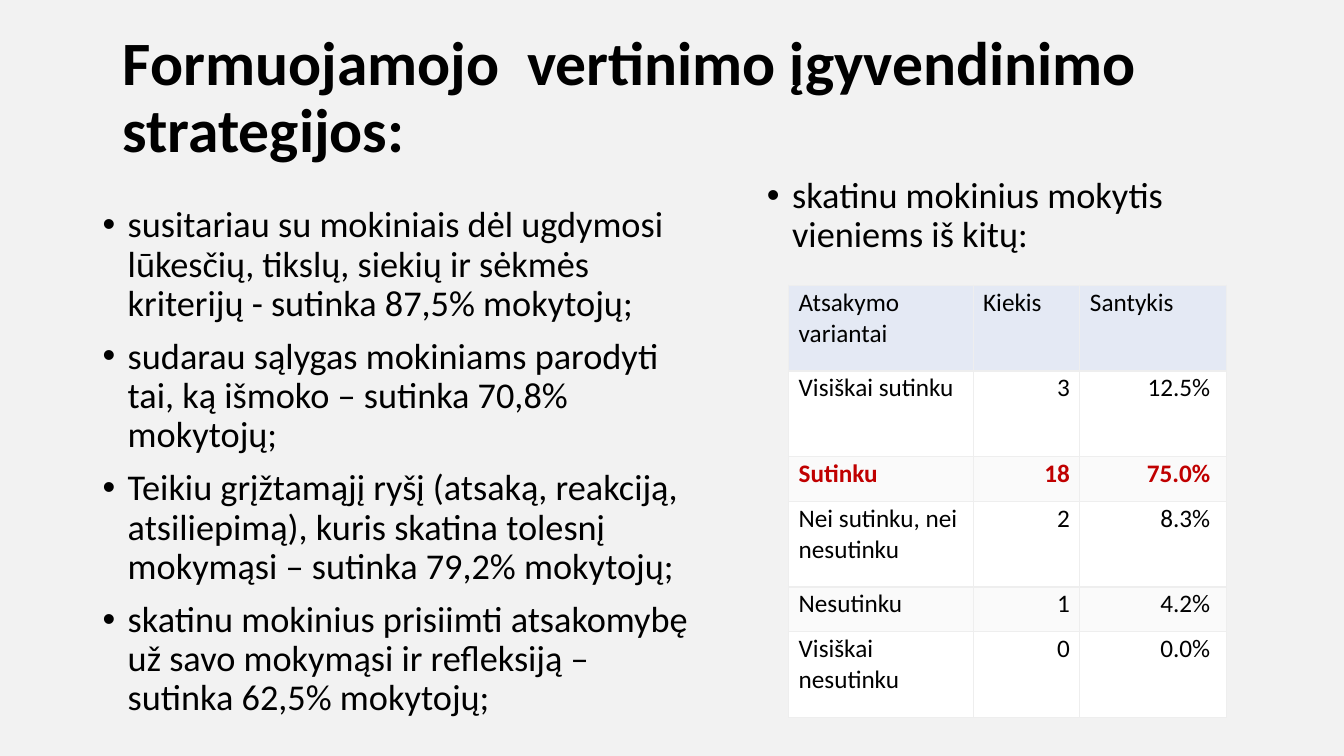
from lxml.etree import SubElement
from pptx import Presentation
from pptx.dml.color import RGBColor
from pptx.enum.text import MSO_ANCHOR, PP_ALIGN
from pptx.oxml.ns import qn
from pptx.util import Pt

BLACK = RGBColor(0x00, 0x00, 0x00)
WHITE = RGBColor(0xFF, 0xFF, 0xFF)
RED = RGBColor(0xC0, 0x00, 0x00)
BACKGROUND = RGBColor(0xF2, 0xF2, 0xF2)
HEADER_FILL = RGBColor(0xE4, 0xE9, 0xF4)
BAND_FILL = RGBColor(0xFA, 0xFA, 0xFA)
BORDER = RGBColor(0xEE, 0xEE, 0xEE)

STRATEGIES = [
    "susitariau su mokiniais dėl ugdymosi lūkesčių, tikslų, siekių ir sėkmės kriterijų - sutinka 87,5% mokytojų;",
    "sudarau sąlygas mokiniams parodyti tai, ką išmoko – sutinka 70,8% mokytojų;",
    "Teikiu grįžtamąjį ryšį (atsaką, reakciją, atsiliepimą), kuris skatina tolesnį mokymąsi – sutinka 79,2% mokytojų;",
    "skatinu mokinius prisiimti atsakomybę už savo mokymąsi ir refleksiją –sutinka 62,5% mokytojų;",
]
ANSWERS = [
    ("Atsakymo variantai", "Kiekis", "Santykis"),
    ("Visiškai sutinku", "3", " 12.5% "),
    ("Sutinku", "18", " 75.0% "),
    ("Nei sutinku, nei nesutinku", "2", " 8.3% "),
    ("Nesutinku", "1", " 4.2% "),
    ("Visiškai nesutinku", "0", " 0.0% "),
]
COLUMN_WIDTHS = [131.8, 76.3, 104.4]
TALL_ROW, SHORT_ROW = 61.2, 31.9
SHORT_ROWS = (2, 4)
HIGHLIGHT_ROW = 2


def apply_format(target, values):
    for name, value in values.items():
        setattr(target, name, value)


class SlideBuilder:
    font_name = "Calibri"

    def __init__(self, slide):
        self.slide = slide

    def background(self, color):
        fill = self.slide.background.fill
        fill.solid()
        fill.fore_color.rgb = color

    def text_run(self, paragraph, text, size, color=BLACK, bold=False):
        run = paragraph.add_run()
        run.text = text
        apply_format(run.font, {"name": self.font_name, "size": Pt(size), "bold": bold})
        run.font.color.rgb = color

    def text_box(self, box, texts, size, bold=False, bullets=False, anchor=MSO_ANCHOR.TOP):
        shape = self.slide.shapes.add_textbox(*map(Pt, box))
        frame = shape.text_frame
        apply_format(frame, {"word_wrap": True, "vertical_anchor": anchor})
        for index, text in enumerate(texts):
            paragraph = frame.add_paragraph() if index else frame.paragraphs[0]
            paragraph.line_spacing = 0.9
            if bullets:
                self.bullet(paragraph)
            self.text_run(paragraph, text, size, bold=bold)

    def bullet(self, paragraph):
        paragraph.space_before = Pt(10)
        properties = paragraph._p.get_or_add_pPr()
        properties.set("marL", str(Pt(18)))
        properties.set("indent", str(Pt(-18)))
        SubElement(properties, qn("a:buFont"), typeface="Arial")
        SubElement(properties, qn("a:buChar"), char="•")

    def borders(self, cell, widths):
        properties = cell._tc.get_or_add_tcPr()
        for side, width in widths.items():
            line = SubElement(properties, qn(f"a:ln{side}"), w=str(Pt(width)))
            fill = SubElement(line, qn("a:solidFill"))
            SubElement(fill, qn("a:srgbClr"), val=str(BORDER))

    def cell(self, cell, text, fill, numeric, highlighted):
        margins = {"margin_left": 7.2, "margin_right": 7.2, "margin_top": 1.4, "margin_bottom": 1.4}
        apply_format(cell, {name: Pt(value) for name, value in margins.items()})
        cell.fill.solid()
        cell.fill.fore_color.rgb = fill
        paragraph = cell.text_frame.paragraphs[0]
        paragraph.alignment = PP_ALIGN.RIGHT if numeric else PP_ALIGN.LEFT
        self.text_run(paragraph, text, 18, RED if highlighted else BLACK, highlighted)

    def answer_table(self, left, top, rows):
        heights = [SHORT_ROW if index in SHORT_ROWS else TALL_ROW for index in range(len(rows))]
        box = (left, top, sum(COLUMN_WIDTHS), sum(heights))
        table = self.slide.shapes.add_table(len(rows), len(COLUMN_WIDTHS), *map(Pt, box)).table
        for column, width in zip(table.columns, COLUMN_WIDTHS):
            column.width = Pt(width)
        for row_index, texts in enumerate(rows):
            table.rows[row_index].height = Pt(heights[row_index])
            fill = HEADER_FILL if row_index == 0 else BAND_FILL if row_index in SHORT_ROWS else WHITE
            for column_index, text in enumerate(texts):
                cell = table.cell(row_index, column_index)
                right = 0.6 if column_index == len(texts) - 1 else 1
                bottom = 0.6 if row_index == len(rows) - 1 else 1
                self.borders(cell, {"L": 1, "R": right, "T": 1, "B": bottom})
                numeric = row_index > 0 and column_index > 0
                self.cell(cell, text, fill, numeric, row_index == HIGHLIGHT_ROW)


def main():
    presentation = Presentation()
    apply_format(presentation, {"slide_width": Pt(960), "slide_height": Pt(540)})
    builder = SlideBuilder(presentation.slides.add_slide(presentation.slide_layouts[6]))
    builder.background(BACKGROUND)
    builder.text_box(
        (80.6, 18.7, 828, 104.4),
        ["Formuojamojo  vertinimo įgyvendinimo  strategijos:"],
        44, bold=True, anchor=MSO_ANCHOR.MIDDLE,
    )
    builder.text_box((66.2, 144, 436.3, 383.8), STRATEGIES, 25.9, bullets=True)
    builder.text_box(
        (540.7, 123.1, 387.4, 363.6),
        ["skatinu mokinius mokytis vieniems iš kitų:"],
        25.9, bullets=True,
    )
    builder.answer_table(563.3, 203.8, ANSWERS)
    presentation.save("out.pptx")


if __name__ == "__main__":
    main()
